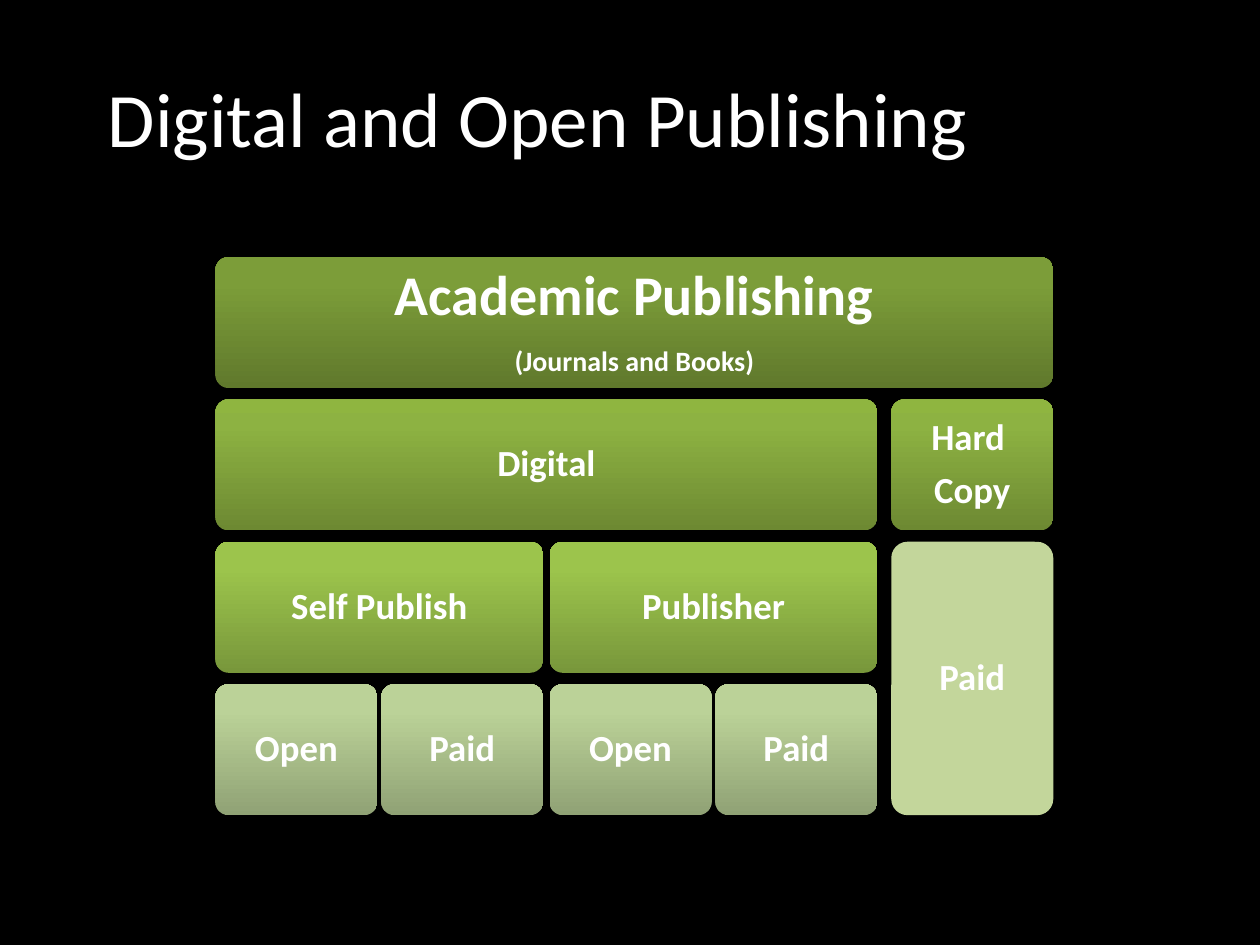
import itertools

import lxml.etree
import pptx
import pptx.dml.color
import pptx.enum.shapes
import pptx.enum.text
import pptx.oxml.ns
import pptx.util

Inches = pptx.util.Inches
Pt = pptx.util.Pt
qn = pptx.oxml.ns.qn

FONT = "Calibri"
WHITE = "FFFFFF"

# Gradient colours from the bottom edge to the top edge
ROOT = ("60792C", "7C9D39", "7D9F38")
FORM = ("6D8932", "8DB242", "8FB540")
ROUTE = ("78973B", "9CC44C", "9DC74A")
PRICE = ("90A275", "BBD298", "BDD498")
PALE = ("C3D69B",)

# Text lines, colours, row, rows spanned, first column, last column
BOXES = [
    (("Academic Publishing", "(Journals and Books)"), ROOT, 0, 1, 0, 4),
    (("Digital",), FORM, 1, 1, 0, 3),
    (("Self Publish",), ROUTE, 2, 1, 0, 1),
    (("Open",), PRICE, 3, 1, 0, 0),
    (("Paid",), PRICE, 3, 1, 1, 1),
    (("Publisher",), ROUTE, 2, 1, 2, 3),
    (("Open",), PRICE, 3, 1, 2, 2),
    (("Paid",), PRICE, 3, 1, 3, 3),
    (("Hard ", "Copy"), FORM, 1, 1, 4, 4),
    (("Paid",), PALE, 2, 2, 4, 4),
]


def color(code):
    return pptx.dml.color.RGBColor.from_string(code)


def style(para, size, bold=False):
    para.alignment = pptx.enum.text.PP_ALIGN.CENTER
    for run in para.runs:
        run.font.name = FONT
        run.font.size = Pt(size)
        run.font.bold = bold
        run.font.color.rgb = color(WHITE)


def paint(shape, codes):
    """Fill with one colour, or with a gradient that rises to the top."""
    if len(codes) == 1:
        shape.fill.solid()
        shape.fill.fore_color.rgb = color(codes[0])
        return
    shape.fill.gradient()
    shape.fill.gradient_angle = 90
    stops = shape.fill._fill._gradFill.find(qn("a:gsLst"))
    for stop in list(stops):
        stops.remove(stop)
    for place, code in zip((0, 80, 100), codes):
        stop = lxml.etree.SubElement(stops, qn("a:gs"), pos=str(place * 1000))
        lxml.etree.SubElement(stop, qn("a:srgbClr"), val=code)


def add_title(slide, text, left, top, width, height):
    title = slide.shapes.title
    title.left, title.top = Inches(left), Inches(top)
    title.width, title.height = Inches(width), Inches(height)
    frame = title.text_frame
    frame.text = text
    frame.vertical_anchor = pptx.enum.text.MSO_ANCHOR.MIDDLE
    style(frame.paragraphs[0], 44)


def add_box(slide, lines, codes, left, top, width, height):
    shape = slide.shapes.add_shape(
        pptx.enum.shapes.MSO_SHAPE.ROUNDED_RECTANGLE,
        Inches(left), Inches(top), Inches(width), Inches(height))
    shape.adjustments[0] = 0.1
    shape.shadow.inherit = False
    shape.line.fill.background()
    paint(shape, codes)

    frame = shape.text_frame
    frame.word_wrap = True
    frame.vertical_anchor = pptx.enum.text.MSO_ANCHOR.MIDDLE
    inset = Inches(0.16 if codes == ROOT else 0.12)
    frame.margin_left = frame.margin_right = inset
    frame.margin_top = frame.margin_bottom = inset
    frame.text = "\n".join(lines)
    sizes = (32, 16) if codes == ROOT else (21, 21)
    for para, size in zip(frame.paragraphs, sizes):
        style(para, size, True)
        para.line_spacing = 0.9
        # Space after as a share of the text size
        after = lxml.etree.SubElement(para._p.pPr, qn("a:spcAft"))
        lxml.etree.SubElement(after, qn("a:spcPct"), val="35000")


def add_tree(slide, left, top, width, height):
    """Lay the boxes out on five columns and four rows."""
    gaps = (0.03, 0.05, 0.03, 0.11)
    wide = (width - sum(gaps)) / 5
    cols = list(itertools.accumulate((wide + gap for gap in gaps), initial=left))
    space = 0.09
    tall = (height - 3 * space) / 4
    for lines, codes, row, rows, first, last in BOXES:
        add_box(slide, lines, codes,
                cols[first], top + row * (tall + space),
                cols[last] + wide - cols[first],
                rows * (tall + space) - space)


def main():
    deck = pptx.Presentation()
    deck.slide_width, deck.slide_height = Inches(10), Inches(7.5)
    slide = deck.slides.add_slide(deck.slide_layouts[5])
    slide.background.fill.solid()
    slide.background.fill.fore_color.rgb = color("000000")
    add_title(slide, "Digital and Open Publishing", 0.51, 0.3, 7.52, 1.25)
    add_tree(slide, 1.71, 2.04, 6.65, 4.43)
    deck.save("out.pptx")


if __name__ == "__main__":
    main()
